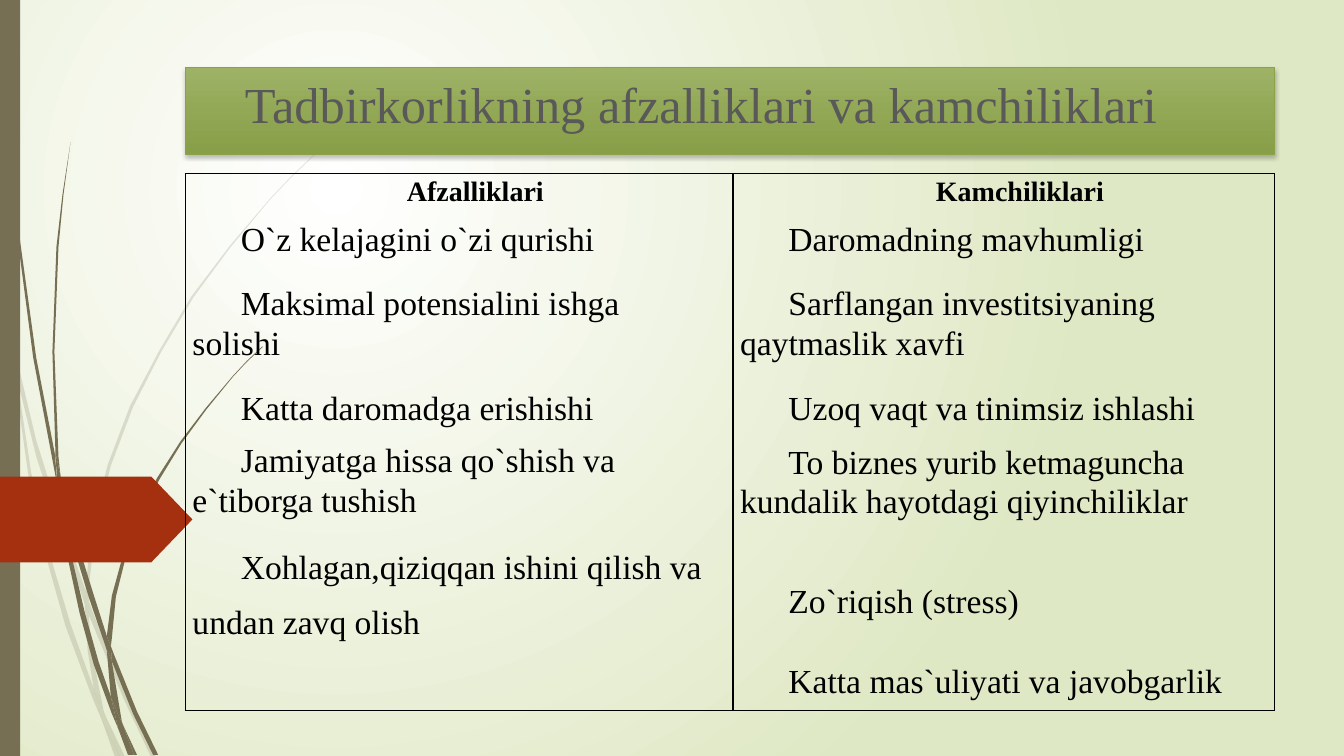
from lxml.etree import SubElement
from pptx import Presentation
from pptx.dml.color import RGBColor
from pptx.enum.shapes import MSO_SHAPE as Shape
from pptx.enum.text import MSO_ANCHOR as Anchor, MSO_AUTO_SIZE as AutoSize, PP_ALIGN as Align
from pptx.oxml.ns import qn
from pptx.util import Cm, Pt

WHITE = RGBColor(0xFF, 0xFF, 0xFF)
PALE_GREEN = RGBColor(0xDF, 0xE8, 0xC4)
LIGHT_OLIVE = RGBColor(0x9D, 0xB2, 0x65)
DARK_OLIVE = RGBColor(0x88, 0x9E, 0x47)
OLIVE_LINE = RGBColor(0x8B, 0xA2, 0x49)
BROWN = RGBColor(0x76, 0x6F, 0x54)
RED = RGBColor(0xA5, 0x30, 0x10)
GREY = RGBColor(0x59, 0x59, 0x59)
BLACK = RGBColor(0, 0, 0)
FONT = "Times New Roman"
CM_PER_UNIT = 2.54

# Outlines of the pieces of grass, in units of 2.54 cm
PALE_GRASS = [
    [(0.11, 3.5), (0.09, 3.22), (0, 2.82), (0, 2.99), (0.1, 3.44)],
    [(0.58, 5.22), (0.84, 5.99), (0.85, 5.86), (0.62, 5.2), (0.36, 4.37), (0.14, 3.45),
     (0.17, 3.76), (0.36, 4.53)],
    [(0.92, 6.07), (0.88, 5.96), (0.88, 6.1), (1.23, 6.94), (1.5, 7.51), (1.55, 7.51),
     (1.27, 6.92)],
    [(1.19, 7.51), (1.24, 7.51), (1.05, 7.11)],
    [(0.93, 6.83), (0.7, 6.19), (0.48, 5.45), (0.31, 4.69), (0.17, 3.76), (0.11, 3.5),
     (0.28, 4.7), (0.44, 5.46), (0.65, 6.21), (0.92, 6.93), (1.01, 7.14), (0.99, 7.07)],
    [(0.84, 5.99), (0.87, 6.46), (0.93, 6.83), (0.96, 6.92), (1.05, 7.11), (1.03, 7.06),
     (0.91, 6.46), (0.88, 6.1), (0.88, 6.08)],
    [(0.88, 5.84), (0.95, 5.22), (1.1, 4.62), (1.32, 4.04), (1.6, 3.49), (1.92, 2.95),
     (2.29, 2.45), (2.68, 1.98), (2.9, 1.75), (3.12, 1.54), (3.12, 1.53), (2.89, 1.75),
     (2.68, 1.97), (2.28, 2.44), (1.9, 2.94), (1.58, 3.48), (1.29, 4.03), (1.07, 4.61),
     (0.91, 5.22), (0.85, 5.84), (0.85, 5.86), (0.88, 5.96)],
    [(1.01, 7.14), (1.14, 7.51), (1.19, 7.51)],
    [(0.88, 6.08), (0.88, 6.1), (0.88, 5.96), (0.85, 5.86), (0.84, 5.99)],
    [(0.96, 6.92), (0.93, 6.83), (0.99, 7.07), (1.01, 7.14), (1.19, 7.51), (1.05, 7.11)],
]
DARK_GRASS = [
    [(0.07, 1.1), (0.17, 2.33), (0.33, 3.55), (0.56, 4.77), (0.57, 4.81), (0.55, 4.57),
     (0.55, 4.53), (0.36, 3.55), (0.19, 2.32), (0.08, 1.09), (0.05, 0.48), (0.04, 0),
     (0.03, 0), (0.04, 0.48)],
    [(0.88, 5.92), (1.06, 6.45), (1.06, 6.33), (1.06, 6.31), (0.93, 5.9), (0.75, 5.32),
     (0.6, 4.72), (0.64, 5.05), (0.75, 5.49)],
    [(1.13, 6.49), (1.1, 6.41), (1.11, 6.56), (1.32, 7.08), (1.52, 7.49), (1.57, 7.49),
     (1.36, 7.06)],
    [(1.1, 6.91), (0.98, 6.57), (0.84, 6.07), (0.72, 5.56), (0.64, 5.05), (0.57, 4.77),
     (0.68, 5.57), (0.79, 6.08), (0.93, 6.59), (1.11, 7.08), (1.17, 7.22), (1.16, 7.17)],
    [(0.6, 4.72), (0.58, 4.53), (0.54, 3.49), (0.58, 2.45), (0.63, 1.93), (0.7, 1.41),
     (0.62, 1.93), (0.56, 2.45), (0.52, 3.49), (0.55, 4.49)],
    [(1.33, 7.49), (1.36, 7.49), (1.22, 7.19)],
    [(0.57, 4.77), (0.64, 5.05), (0.6, 4.72), (0.55, 4.49), (0.55, 4.53)],
    [(1.11, 6.33), (1.15, 5.92), (1.25, 5.52), (1.4, 5.13), (1.58, 4.76), (1.8, 4.4),
     (2.05, 4.06), (2.31, 3.74), (2.45, 3.59), (2.61, 3.44), (2.6, 3.44), (2.45, 3.58),
     (2.31, 3.73), (2.04, 4.05), (1.79, 4.38), (1.56, 4.74), (1.37, 5.12), (1.22, 5.51),
     (1.11, 5.91), (1.06, 6.31), (1.1, 6.41)],
    [(1.17, 7.22), (1.27, 7.49), (1.31, 7.49)],
    [(1.06, 6.45), (1.1, 6.91), (1.16, 7.06), (1.22, 7.19), (1.21, 7.16), (1.11, 6.56),
     (1.09, 6.51)],
    [(1.06, 6.45), (1.09, 6.51), (1.11, 6.56), (1.1, 6.41), (1.06, 6.31), (1.06, 6.33)],
    [(1.16, 7.06), (1.1, 6.91), (1.16, 7.17), (1.17, 7.22), (1.3, 7.49), (1.33, 7.49),
     (1.22, 7.19)],
]
# Left and right cell of each row: vertical anchor and paragraphs
ROWS = [
    (1.05, (Anchor.TOP, ["Afzalliklari"]), (Anchor.TOP, ["Kamchiliklari"])),
    (1.3, (Anchor.MIDDLE, ["O`z kelajagini o`zi qurishi"]),
     (Anchor.MIDDLE, ["Daromadning mavhumligi"])),
    (2.95, (Anchor.MIDDLE, ["Maksimal potensialini ishga solishi"]),
     (Anchor.MIDDLE, ["Sarflangan investitsiyaning qaytmaslik xavfi"])),
    (1.3, (Anchor.MIDDLE, ["Katta daromadga erishishi"]),
     (Anchor.MIDDLE, ["Uzoq vaqt va tinimsiz ishlashi"])),
    (2.34, (Anchor.MIDDLE, ["Jamiyatga hissa qo`shish va e`tiborga tushish"]),
     (Anchor.BOTTOM, ["To biznes yurib ketmaguncha kundalik hayotdagi qiyinchiliklar"])),
    (4.54, (Anchor.TOP, ["Xohlagan,qiziqqan ishini qilish va undan zavq olish"]),
     (Anchor.BOTTOM, ["Zo`riqish (stress)", "Katta mas`uliyati va javobgarlik"])),
]
COLUMN_WIDTHS = [13.8, 13.65]
LEFT = 4.67


def paint(shape, color):
    shape.shadow.inherit = False
    shape.fill.solid()
    shape.fill.fore_color.rgb = color
    shape.line.fill.background()


deck = Presentation()
deck.slide_width, deck.slide_height = Cm(33.87), Cm(19.05)
page = deck.slides.add_slide(deck.slide_layouts[5])

# Background
backdrop = page.background.fill
backdrop.gradient()
for stop, color in zip(backdrop.gradient_stops, (WHITE, PALE_GREEN)):
    stop.color.rgb = color
gradient = page.element.find(".//" + qn("a:gradFill"))
gradient.remove(gradient.find(qn("a:lin")))
circle = SubElement(gradient, qn("a:path"), {"path": "circle"})
SubElement(circle, qn("a:fillToRect"), l="50000", t="50000", r="100000", b="100000")

# Grass, side bar and arrow
for grass, alpha in ((PALE_GRASS, "20000"), (DARK_GRASS, "100000")):
    for outline in grass:
        start, *others = [(Cm(x * CM_PER_UNIT), Cm(y * CM_PER_UNIT)) for x, y in outline]
        builder = page.shapes.build_freeform(*start)
        builder.add_line_segments(others)
        blade = builder.convert_to_shape()
        paint(blade, BROWN)
        SubElement(blade.element.find(".//" + qn("a:srgbClr")), qn("a:alpha"), val=alpha)

side_bar = page.shapes.add_shape(Shape.RECTANGLE, 0, 0, Cm(0.51), deck.slide_height)
paint(side_bar, BROWN)
arrow = page.shapes.add_shape(Shape.PENTAGON, 0, Cm(12.01), Cm(4.85), Cm(2.16))
arrow.adjustments[0] = 0.48
paint(arrow, RED)

# Title
title = page.shapes.title
title_place = {"left": LEFT, "top": 1.7, "width": sum(COLUMN_WIDTHS), "height": 2.19}
for name, value in title_place.items():
    setattr(title, name, Cm(value))
title.fill.gradient()
title.fill.gradient_angle = 270
for stop, color in zip(title.fill.gradient_stops, (LIGHT_OLIVE, DARK_OLIVE)):
    stop.color.rgb = color
title.line.color.rgb = OLIVE_LINE
title.line.width = Pt(0.75)
effects = SubElement(title.element.spPr, qn("a:effectLst"))
shadow = SubElement(effects, qn("a:outerShdw"), blurRad=str(Pt(3)), dist=str(Pt(2)),
                    dir="5400000", rotWithShape="0")
SubElement(SubElement(shadow, qn("a:srgbClr"), val=str(BLACK)), qn("a:alpha"), val="25000")
frame = title.text_frame
frame_format = {"margin_left": Cm(1.5), "margin_top": Cm(0.15), "word_wrap": True,
                "auto_size": AutoSize.NONE, "vertical_anchor": Anchor.TOP}
for name, value in frame_format.items():
    setattr(frame, name, value)
para = frame.paragraphs[0]
para.alignment = Align.LEFT
para.line_spacing = 1.0
para.space_before = Pt(0)
span = para.add_run()
span.text = "Tadbirkorlikning afzalliklari va kamchiliklari"
span.font.name, span.font.size = FONT, Pt(36)
span.font.color.rgb = GREY

# Table
table = page.shapes.add_table(
    len(ROWS), 2, Cm(LEFT), Cm(4.37), Cm(sum(COLUMN_WIDTHS)),
    Cm(sum(row[0] for row in ROWS))).table
table.first_row = table.horz_banding = False
for column, width in zip(table.columns, COLUMN_WIDTHS):
    column.width = Cm(width)
cell_margins = {"margin_left": 0.18, "margin_top": 0.03, "margin_right": 0.58,
                "margin_bottom": 0.23}
last_row = len(ROWS) - 1
for row, (height, *entries) in enumerate(ROWS):
    table.rows[row].height = Cm(height)
    header = row == 0
    for column, (anchor, texts) in enumerate(entries):
        cell = table.cell(row, column)
        for name, value in cell_margins.items():
            setattr(cell, name, Cm(value))
        cell.vertical_anchor = anchor
        properties = cell._tc.get_or_add_tcPr()
        borders = {"lnL": True, "lnR": True, "lnT": header, "lnB": row == last_row}
        for side, visible in borders.items():
            edge = SubElement(properties, qn("a:" + side), w=str(Pt(1)))
            edge_fill = SubElement(edge, qn("a:solidFill" if visible else "a:noFill"))
            if visible:
                SubElement(edge_fill, qn("a:srgbClr"), val=str(BLACK))
        cell.fill.background()
        for index, text in enumerate(texts):
            frame = cell.text_frame
            para = frame.add_paragraph() if index else frame.paragraphs[0]
            para.alignment = Align.CENTER if header else Align.LEFT
            para.line_spacing = 1.49 if (row, column) == (last_row, 0) else 1.07
            para.space_after = Pt(29.2 if len(texts) > 1 else 0)
            para._p.get_or_add_pPr().set("indent", str(Cm(1.22)))
            span = para.add_run()
            span.text = text
            font_format = {"name": FONT, "size": Pt(20 if header else 24), "bold": header}
            for name, value in font_format.items():
                setattr(span.font, name, value)
            span.font.color.rgb = BLACK

deck.save("out.pptx")
